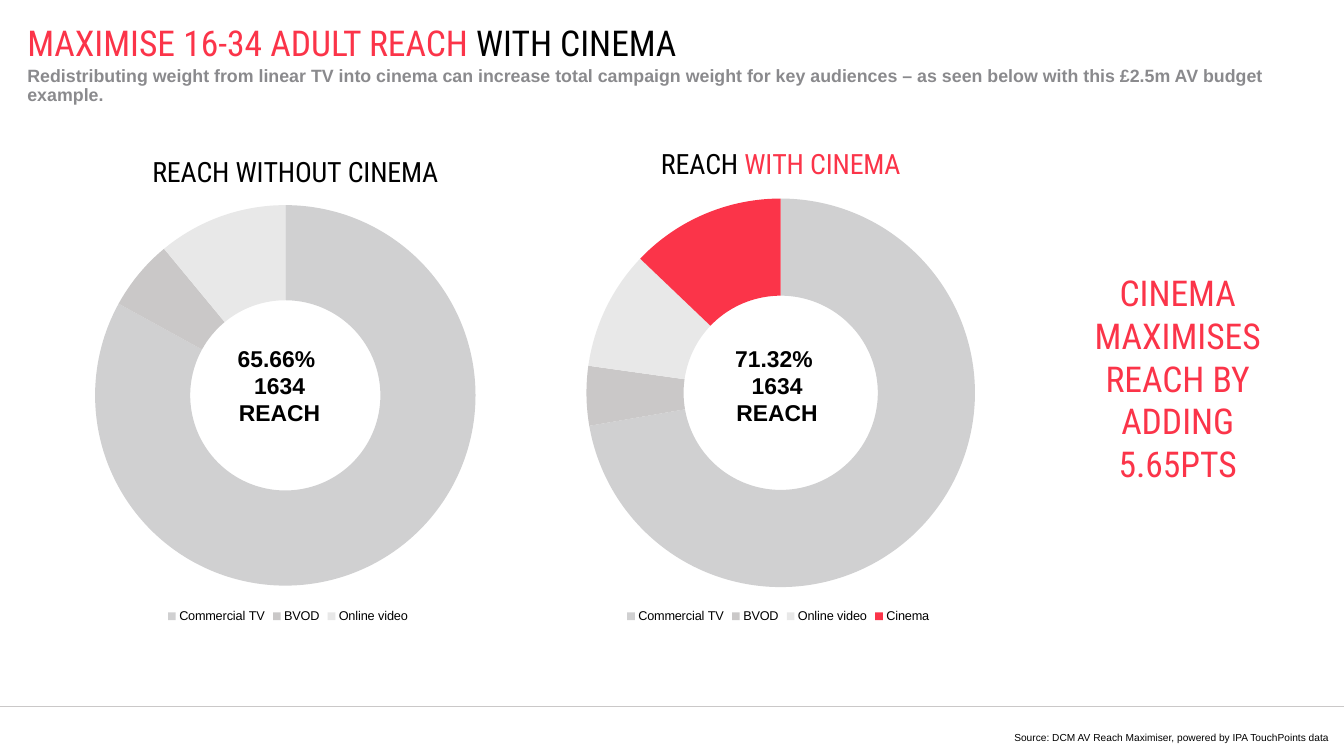
from dataclasses import dataclass

from lxml import etree
from pptx import Presentation
from pptx.chart.data import CategoryChartData
from pptx.dml.color import RGBColor
from pptx.enum.chart import XL_CHART_TYPE, XL_LEGEND_POSITION
from pptx.enum.shapes import MSO_CONNECTOR
from pptx.enum.text import MSO_ANCHOR, MSO_AUTO_SIZE, PP_ALIGN
from pptx.oxml.ns import qn
from pptx.util import Cm, Pt

DOUGHNUT = XL_CHART_TYPE.DOUGHNUT
LEGEND_BOTTOM = XL_LEGEND_POSITION.BOTTOM
STRAIGHT = MSO_CONNECTOR.STRAIGHT
TOP, MIDDLE = MSO_ANCHOR.TOP, MSO_ANCHOR.MIDDLE
LEFT, CENTER, RIGHT = PP_ALIGN.LEFT, PP_ALIGN.CENTER, PP_ALIGN.RIGHT
NO_AUTOFIT = MSO_AUTO_SIZE.NONE


@dataclass(frozen=True)
class Theme:
    red: str = "FB3449"
    black: str = "000000"
    subtitle_grey: str = "8A8A8D"
    rule_grey: str = "CAC8C8"
    chart_text: str = "00BFD6"
    slice_line: str = "F9F9F9"
    slices: tuple = ("D0D0D1", "CAC8C8", "E8E8E8", "FB3449")
    heading_font: str = "Roboto Condensed"
    body_font: str = "Arial"
    headline: int = 28
    chart_title: int = 22
    reach: int = 18
    subtitle: int = 14
    legend: int = 10
    source: int = 8


THEME = Theme()
SLIDE_WIDTH, SLIDE_HEIGHT = 37.34, 21.0


def rgb(value):
    return RGBColor.from_string(value)


def write_text(frame, paragraphs, size, font=THEME.body_font, color=THEME.black,
               bold=False, align=LEFT, line_spacing=None, plain=False):
    for index, runs in enumerate(paragraphs):
        paragraph = frame.paragraphs[0] if index == 0 else frame.add_paragraph()
        if plain:
            properties = paragraph._p.get_or_add_pPr()
            properties.set("marL", "0")
            properties.set("indent", "0")
            etree.SubElement(properties, qn("a:buNone"))
            paragraph.space_before = Pt(0)
        paragraph.alignment = align
        if line_spacing:
            paragraph.line_spacing = Pt(line_spacing)
        for text, run_color in runs:
            run = paragraph.add_run()
            run.text = text
            run.font.name = font
            run.font.size = Pt(size)
            run.font.bold = bold
            run.font.color.rgb = rgb(run_color or color)


def set_frame(frame, anchor, margin=None):
    frame.word_wrap = True
    frame.auto_size = NO_AUTOFIT
    frame.vertical_anchor = anchor
    if margin is not None:
        frame.margin_left = frame.margin_right = Cm(margin)
        frame.margin_top = frame.margin_bottom = Cm(margin)


def fill_placeholder(placeholder, box, paragraphs, anchor, **text_format):
    placeholder.left, placeholder.top, placeholder.width, placeholder.height = map(Cm, box)
    set_frame(placeholder.text_frame, anchor, margin=0)
    write_text(placeholder.text_frame, paragraphs, plain=True, **text_format)


def add_label(slide, box, paragraphs, **text_format):
    label = slide.shapes.add_textbox(*map(Cm, box))
    set_frame(label.text_frame, MIDDLE)
    write_text(label.text_frame, paragraphs, align=CENTER, **text_format)


def set_layout(parent, position, target=None, **fractions):
    for old_layout in parent.findall(qn("c:layout")):
        parent.remove(old_layout)
    layout = etree.Element(qn("c:layout"))
    manual = etree.SubElement(layout, qn("c:manualLayout"))
    settings = {"layoutTarget": target} if target else {}
    settings.update(xMode="edge", yMode="edge", **fractions)
    for tag, value in settings.items():
        etree.SubElement(manual, qn(f"c:{tag}")).set("val", str(value))
    parent.insert(position, layout)


def add_header(slide, box):
    left, top, width, height = box
    fill_placeholder(
        slide.shapes.title, (left, top, width, 0.81),
        [[("MAXIMISE 16-34 ADULT REACH ", THEME.red), ("WITH CINEMA", None)]],
        MIDDLE, size=THEME.headline, font=THEME.heading_font)
    fill_placeholder(
        slide.placeholders[1], (left, top + 1.09, width, height - 1.09),
        [[("Redistributing weight from linear TV into cinema can increase total campaign "
           "weight for key audiences – as seen below with this £2.5m AV budget example.", None)]],
        TOP, size=THEME.subtitle, color=THEME.subtitle_grey, bold=True, line_spacing=15)


def add_reach_chart(slide, box, title_runs, shares, reach, reach_shift, title_at, plot_at):
    left, top, width, height = box
    data = CategoryChartData(number_format="0")
    data.categories = list(shares)
    data.add_series("".join(text for text, _ in title_runs), list(shares.values()))
    chart = slide.shapes.add_chart(DOUGHNUT, *map(Cm, box), data).chart
    chart.font.name = THEME.body_font
    chart.font.size = Pt(THEME.legend)
    chart.font.color.rgb = rgb(THEME.chart_text)

    chart.has_title = True
    title = chart.chart_title
    write_text(title.text_frame, [title_runs], THEME.chart_title,
               font=THEME.heading_font, align=CENTER)
    set_layout(title._element, 1, **title_at)

    chart.has_legend = True
    chart.legend.position = LEGEND_BOTTOM
    chart.legend.include_in_layout = False
    chart.legend.font.name = THEME.body_font
    chart.legend.font.size = Pt(THEME.legend)
    chart.legend.font.color.rgb = rgb(THEME.black)

    plot = chart.plots[0]
    plot.vary_by_categories = True
    share_series = plot.series[0]
    share_series.format.line.color.rgb = rgb(THEME.slice_line)
    share_series.format.line.width = Pt(0.75)
    for index, color in enumerate(THEME.slices[:len(shares)]):
        slice_fill = share_series.points[index].format.fill
        slice_fill.solid()
        slice_fill.fore_color.rgb = rgb(color)
    plot_area = chart._chartSpace.find(qn("c:chart")).find(qn("c:plotArea"))
    set_layout(plot_area, 0, target="inner", **plot_at)

    add_label(slide, (left + reach_shift, top + 0.79, width, height - 1.17),
              [[(line, None)] for line in (reach + " ", "1634", "REACH")],
              size=THEME.reach, bold=True)


def add_takeaway(slide, box):
    add_label(slide, box, [[("CINEMA MAXIMISES REACH BY ADDING 5.65PTS", None)]],
              size=THEME.headline, font=THEME.heading_font, color=THEME.red)


def add_footer(slide, box):
    left, top, width, height = box
    rule = slide.shapes.add_connector(STRAIGHT, Cm(left), Cm(top), Cm(left + width), Cm(top))
    rule.line.color.rgb = rgb(THEME.rule_grey)
    rule.line.width = Pt(1)
    etree.SubElement(rule._element.spPr, qn("a:effectLst"))
    fill_placeholder(
        slide.placeholders[2], (left + width - 19.89, top + 0.39, 19.48, 0.58),
        [[("Source: DCM AV Reach Maximiser, powered by IPA TouchPoints data", None)]],
        MIDDLE, size=THEME.source, align=RIGHT, line_spacing=19)


def main():
    presentation = Presentation()
    presentation.slide_width = Cm(SLIDE_WIDTH)
    presentation.slide_height = Cm(SLIDE_HEIGHT)
    slide = presentation.slides.add_slide(presentation.slide_layouts[3])
    add_header(slide, (0.76, 0.76, 34.5, 2.31))
    add_reach_chart(
        slide, (0.76, 3.58, 14.48, 13.84), [("REACH WITHOUT CINEMA", None)],
        {"Commercial TV": 83, "BVOD": 6, "Online video": 11}, "65.66%", -0.23,
        {"x": 0.23, "y": 0.04}, {"x": 0.13, "y": 0.15, "w": 0.73, "h": 0.77})
    add_reach_chart(
        slide, (14.38, 3.58, 14.48, 13.84), [("REACH ", None), ("WITH CINEMA", THEME.red)],
        {"Commercial TV": 73, "BVOD": 5, "Online video": 10, "Cinema": 13}, "71.32%", -0.03,
        {"x": 0.27, "y": 0.03}, {"x": 0.13, "y": 0.14, "w": 0.75, "h": 0.78})
    add_takeaway(slide, (29.57, 8.71, 6.3, 3.58))
    add_footer(slide, (0, 19.63, SLIDE_WIDTH, 1.37))
    presentation.save("out.pptx")


if __name__ == "__main__":
    main()
